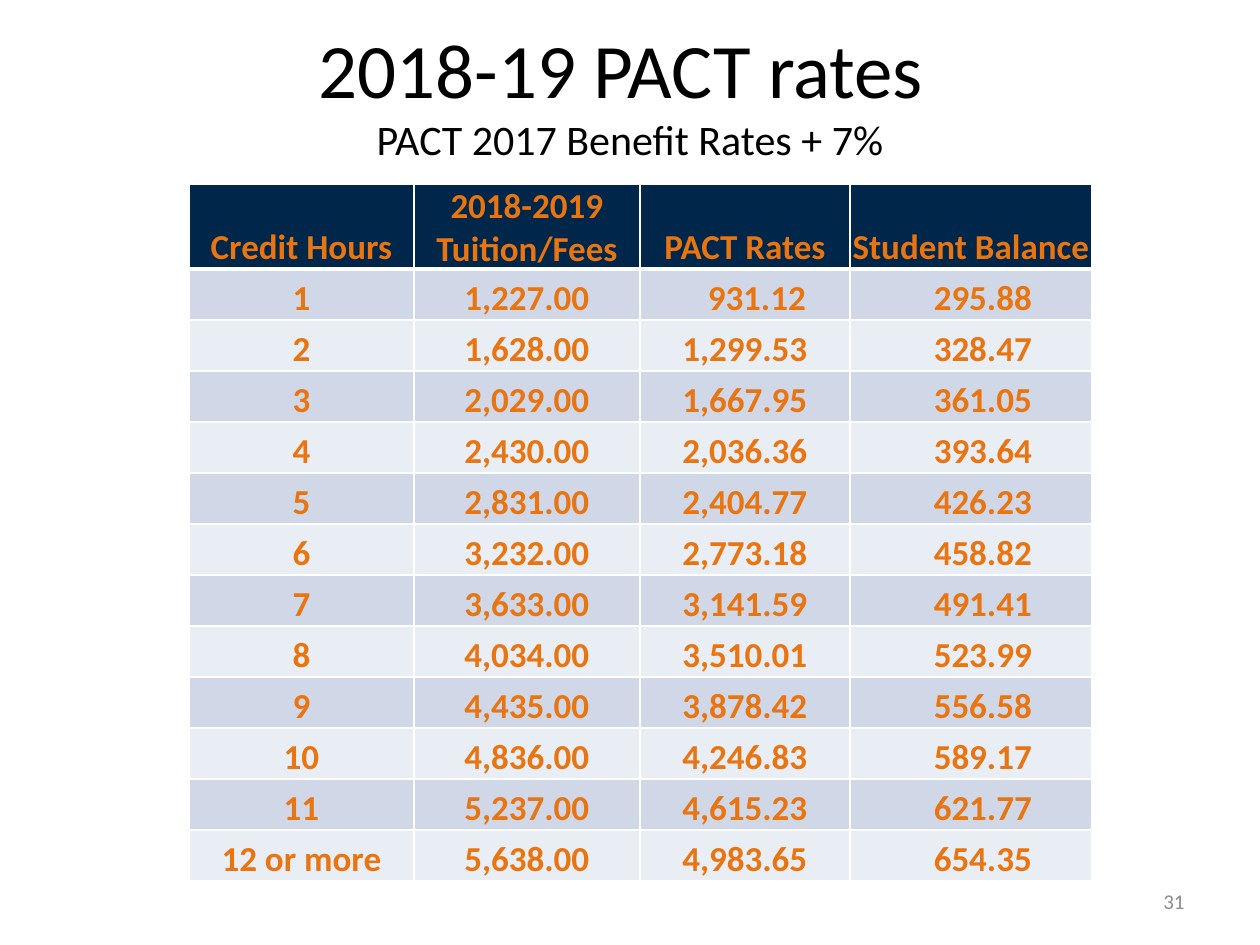
from dataclasses import dataclass

import lxml.etree
import pptx
import pptx.dml.color
import pptx.enum.text
import pptx.oxml.ns
import pptx.util

PX = 914400 / 126
FONT = "Calibri"
BLACK, GREY, WHITE = "000000", "8C8C8C", "FFFFFF"
NAVY, ORANGE = "002649", "E87511"
BANDS = ("D0D8E8", "E9EDF4")
HEADER_HEIGHT, ROW_HEIGHT = 85, 51

ALIGN = pptx.enum.text.PP_ALIGN
ANCHOR = pptx.enum.text.MSO_ANCHOR


@dataclass(frozen=True)
class Column:
    heading: str
    width: int
    values: tuple[str, ...]
    indent: int = 1  # left margin that shifts the centred values


COLUMNS = (
    Column("Credit Hours", 225, (*map(str, range(1, 12)), "12 or more")),
    Column("2018-2019 Tuition/Fees", 226,
           tuple(f"{1227 + 401 * step:,}.00" for step in range(12))),
    Column("PACT Rates", 210,
           ("931.12", "1,299.53", "1,667.95", "2,036.36", "2,404.77", "2,773.18",
            "3,141.59", "3,510.01", "3,878.42", "4,246.83", "4,615.23", "4,983.65")),
    Column("Student Balance", 242,
           ("295.88", "328.47", "361.05", "393.64", "426.23", "458.82",
            "491.41", "523.99", "556.58", "589.17", "621.77", "654.35"), indent=25),
)


def px(length: int) -> int:
    return round(length * PX)


def colour(value: str) -> pptx.dml.color.RGBColor:
    return pptx.dml.color.RGBColor.from_string(value)


def write(paragraph, text: str, *, size: int, fill: str = BLACK,
          bold: bool = False, align=ALIGN.CENTER) -> None:
    paragraph.alignment = align
    run = paragraph.add_run()
    run.text = text
    run.font.name = FONT
    run.font.size = pptx.util.Pt(size)
    run.font.bold = bold
    run.font.color.rgb = colour(fill)


def set_borders(cell, widths: dict[str, int]) -> None:
    properties = cell._tc.get_or_add_tcPr()
    for position, (side, width) in enumerate(widths.items()):
        line = lxml.etree.Element(pptx.oxml.ns.qn(f"a:ln{side}"),
                                  w=str(pptx.util.Pt(width)))
        solid = lxml.etree.SubElement(line, pptx.oxml.ns.qn("a:solidFill"))
        lxml.etree.SubElement(solid, pptx.oxml.ns.qn("a:srgbClr"), val=WHITE)
        properties.insert(position, line)


def fill_cell(cell, text: str, *, background: str, indent: int = 1,
              top: int = 1, bottom: int = 1) -> None:
    cell.margin_left, cell.margin_right = px(indent), px(1)
    cell.margin_top, cell.margin_bottom = px(1), 0
    cell.vertical_anchor = ANCHOR.BOTTOM
    cell.fill.solid()
    cell.fill.fore_color.rgb = colour(background)
    write(cell.text_frame.paragraphs[0], text, size=20, fill=ORANGE, bold=True)
    set_borders(cell, {"L": 1, "R": 1, "T": top, "B": bottom})


def add_title(slide) -> None:
    title = slide.shapes.title
    title.left, title.top, title.width, title.height = map(px, (126, 32, 1008, 159))
    frame = title.text_frame
    frame.auto_size = pptx.enum.text.MSO_AUTO_SIZE.NONE
    frame.word_wrap = True
    frame.vertical_anchor = ANCHOR.MIDDLE
    frame.margin_top, frame.margin_bottom = px(6), px(44)
    heading = frame.paragraphs[0]
    write(heading, "2018-19 PACT rates ", size=44)
    heading.add_line_break()
    write(heading, "PACT 2017 Benefit Rates + 7%", size=24)


def add_rates(slide) -> None:
    row_count = len(COLUMNS[0].values)
    rates = slide.shapes.add_table(
        row_count + 1, len(COLUMNS), px(189), px(184),
        px(sum(column.width for column in COLUMNS)),
        px(HEADER_HEIGHT + ROW_HEIGHT * row_count)).table
    for index, row in enumerate(rates.rows):
        row.height = px(ROW_HEIGHT if index else HEADER_HEIGHT)
    for index, column in enumerate(COLUMNS):
        rates.columns[index].width = px(column.width)
        fill_cell(rates.cell(0, index), column.heading, background=NAVY, bottom=3)
        for row, value in enumerate(column.values, start=1):
            # The first PACT rate has one digit group less and sits further right
            indent = 25 if value == "931.12" else column.indent
            fill_cell(rates.cell(row, index), value, indent=indent,
                      background=BANDS[(row - 1) % 2], top=3 if row == 1 else 1)


def add_page_number(slide) -> None:
    frame = slide.shapes.add_textbox(px(903), px(876), px(294), px(50)).text_frame
    frame.word_wrap = True
    frame.vertical_anchor = ANCHOR.MIDDLE
    write(frame.paragraphs[0], "31", size=12, fill=GREY, align=ALIGN.RIGHT)


def main() -> None:
    deck = pptx.Presentation()
    deck.slide_width, deck.slide_height = px(1260), px(945)
    slide = deck.slides.add_slide(deck.slide_layouts[5])
    add_title(slide)
    add_page_number(slide)
    add_rates(slide)
    deck.save("out.pptx")


if __name__ == "__main__":
    main()
